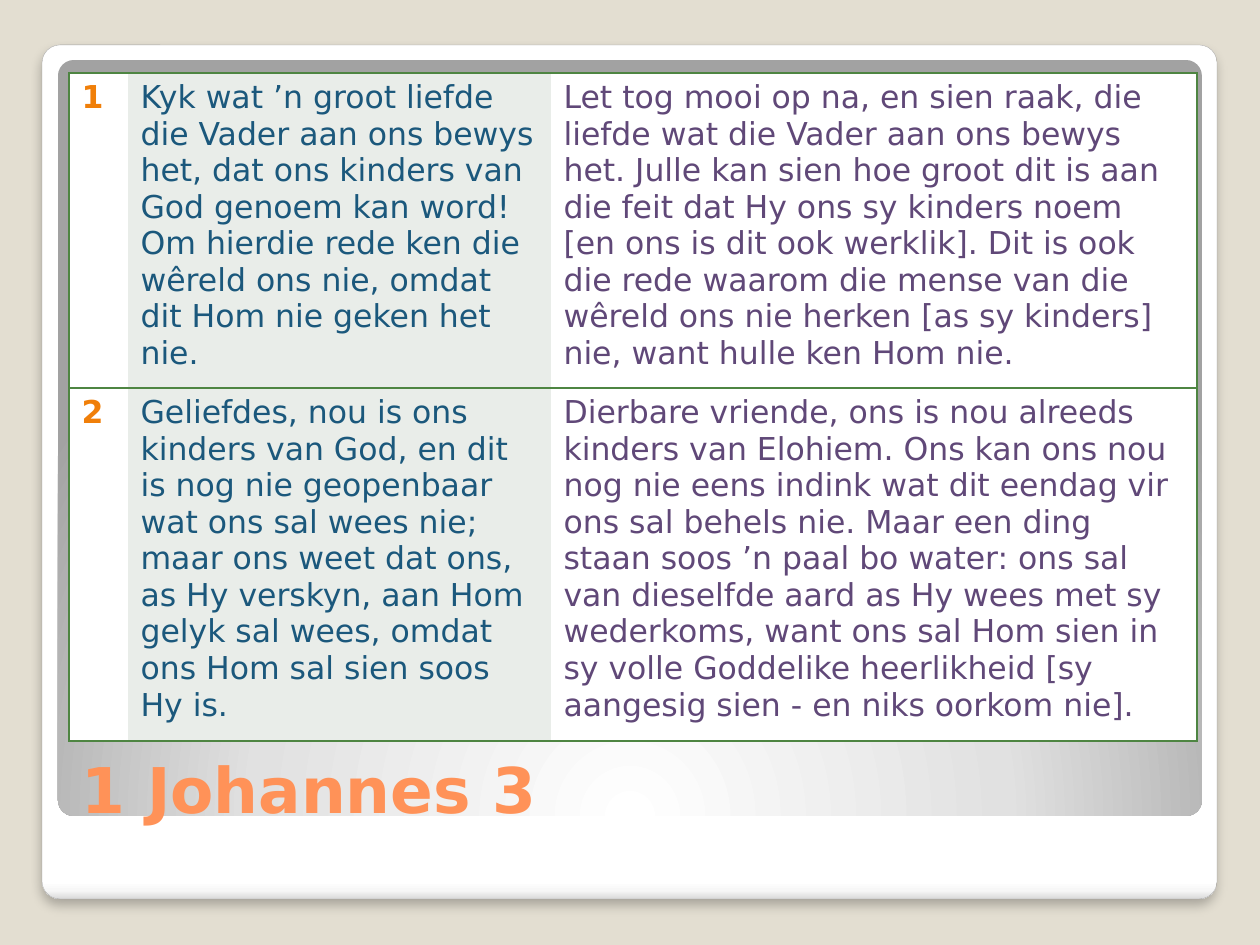
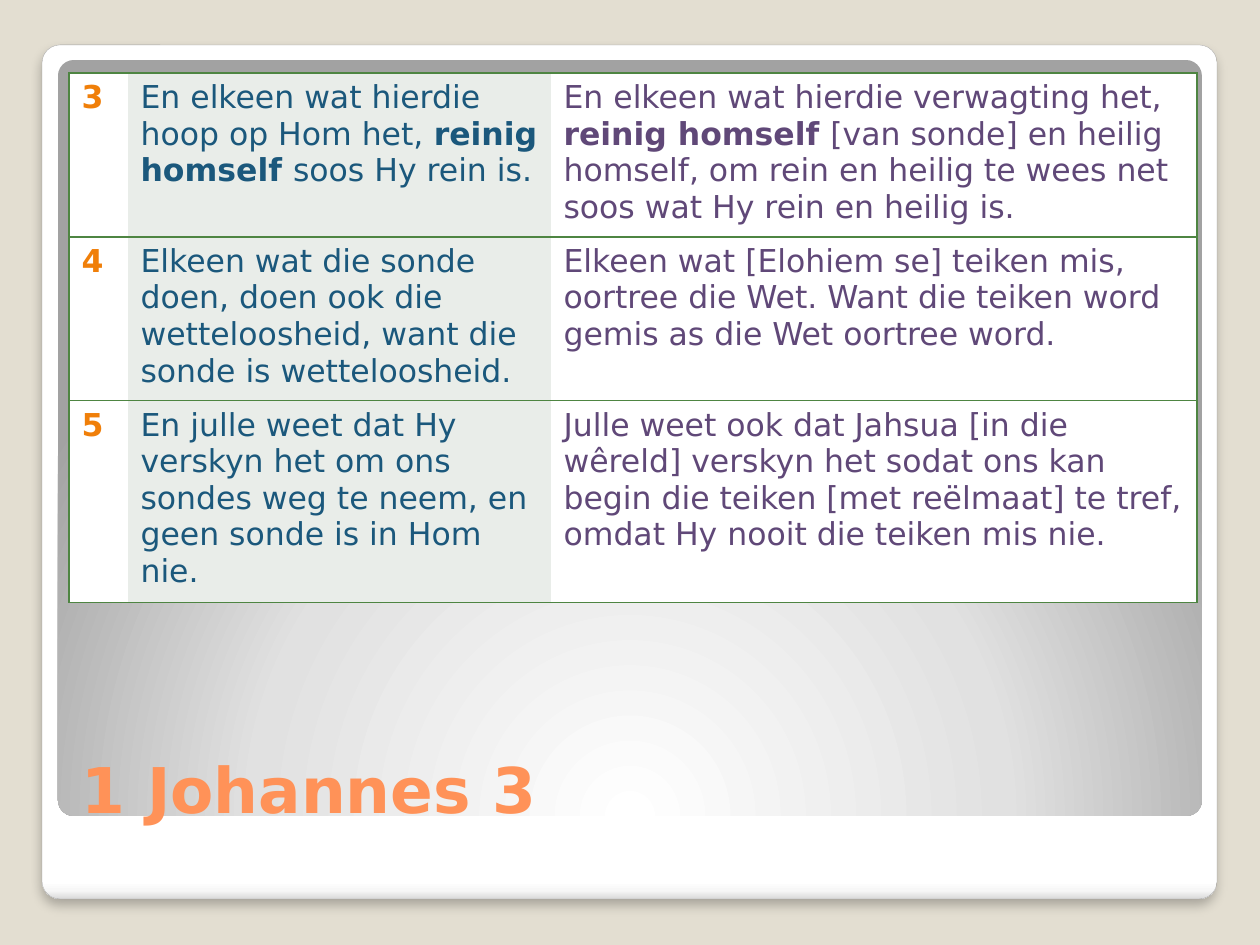
from lxml import etree
from pptx import Presentation
from pptx.dml.color import RGBColor
from pptx.enum import shapes, text
from pptx.oxml import ns
from pptx.util import Emu, Pt

EMU_PER_PX = 914400 / 126
FONT = "DejaVu Sans"
BACKDROP, CARD_EDGE, RULE = "E3DED1", "A4A4A4", "4E8542"
TITLE, NUMBER, VERSE, PARAPHRASE = "FF9258", "F07F09", "1B587C", "604878"
WHITE, TINT = "FFFFFF", "E9EDE9"

CARD_BOX = (42, 45, 1175, 854)
PANEL_BOX = (58, 60, 1144, 756)
TITLE_BOX = (69, 687, 1128, 145)
VERSES_LEFT, VERSES_TOP = 69, 73
COLUMNS = ((59, NUMBER, WHITE), (423, VERSE, TINT), (646, PARAPHRASE, WHITE))
LINE_HEIGHT, CELL_PADDING = 36.6, 12.6

CARD_STOPS = ((0, WHITE), (98, WHITE), (99, "F7F7F7"), (100, "DADADA"))
PANEL_STOPS = ((0, WHITE), (55, "E1E1E1"), (100, "A2A2A2"))

CHAPTER = "1 Johannes 3"
PASSAGES = (
    (
        (8, "*1*",
         "Kyk wat ’n groot liefde die Vader aan ons bewys het, dat ons kinders van God "
         "genoem kan word! Om hierdie rede ken die wêreld ons nie, omdat dit Hom nie "
         "geken het nie.",
         "Let tog mooi op na, en sien raak, die liefde wat die Vader aan ons bewys het. "
         "Julle kan sien hoe groot dit is aan die feit dat Hy ons sy kinders noem [en ons "
         "is dit ook werklik]. Dit is ook die rede waarom die mense van die wêreld ons nie "
         "herken [as sy kinders] nie, want hulle ken Hom nie."),
        (9, "*2*",
         "Geliefdes, nou is ons kinders van God, en dit is nog nie geopenbaar wat ons sal "
         "wees nie; maar ons weet dat ons, as Hy verskyn, aan Hom gelyk sal wees, omdat "
         "ons Hom sal sien soos Hy is.",
         "Dierbare vriende, ons is nou alreeds kinders van Elohiem. Ons kan ons nou nog "
         "nie eens indink wat dit eendag vir ons sal behels nie. Maar een ding staan soos "
         "’n paal bo water: ons sal van dieselfde aard as Hy wees met sy wederkoms, want "
         "ons sal Hom sien in sy volle Goddelike heerlikheid [sy aangesig sien - en niks "
         "oorkom nie]."),
    ),
    (
        (4, "*3*",
         "En elkeen wat hierdie hoop op Hom het, *reinig homself *soos Hy rein is.",
         "En elkeen wat hierdie verwagting het, *reinig homself *[van sonde] en heilig "
         "homself, om rein en heilig te wees net soos wat Hy rein en heilig is."),
        (4, "*4*",
         "Elkeen wat die sonde doen, doen ook die wetteloosheid, want die sonde is "
         "wetteloosheid.",
         "Elkeen wat [Elohiem se] teiken mis, oortree die Wet. Want die teiken word gemis "
         "as die Wet oortree word."),
        (5, "*5*",
         "En julle weet dat Hy verskyn het om ons sondes weg te neem, en geen sonde is in "
         "Hom nie.",
         "Julle weet ook dat Jahsua [in die wêreld] verskyn het sodat ons kan begin die "
         "teiken [met reëlmaat] te tref, omdat Hy nooit die teiken mis nie."),
    ),
)


def px(*lengths):
    return [Emu(round(length * EMU_PER_PX)) for length in lengths]


def rgb(value):
    return RGBColor.from_string(value)


def node(parent, tag, **attributes):
    return etree.SubElement(parent, ns.qn(tag), {k: str(v) for k, v in attributes.items()})


def write(frame, content, *, size, color):
    frame.word_wrap = True
    for index, part in enumerate(content.split("*")):
        if part:
            run = frame.paragraphs[0].add_run()
            run.text = part
            run.font.name = FONT
            run.font.size = Pt(size)
            run.font.bold = index % 2 == 1
            run.font.color.rgb = rgb(color)


def gradient(shape, stops):
    shape.fill.background()
    properties = shape._element.spPr
    grad = etree.Element(ns.qn("a:gradFill"), rotWithShape="1")
    properties.replace(properties.find(ns.qn("a:noFill")), grad)
    stop_list = node(grad, "a:gsLst")
    for position, color in stops:
        node(node(stop_list, "a:gs", pos=position * 1000), "a:srgbClr", val=color)
    return grad


def rounded(slide, box, stops):
    shape = slide.shapes.add_shape(shapes.MSO_SHAPE.ROUNDED_RECTANGLE, *px(*box))
    shape.adjustments[0] = 0.021
    shape.shadow.inherit = False
    return shape, gradient(shape, stops)


def add_card(slide, box):
    card, grad = rounded(slide, box, CARD_STOPS)
    node(grad, "a:lin", ang=90 * 60000, scaled=0)
    card.line.color.rgb = rgb(CARD_EDGE)
    card.line.width = Pt(0.16)
    effects = card._element.spPr.find(ns.qn("a:effectLst"))
    shadow = node(effects, "a:outerShdw", blurRad=Pt(6), dist=Pt(4), dir=90 * 60000,
                  algn="t", rotWithShape=0)
    node(node(shadow, "a:srgbClr", val="000000"), "a:alpha", val=25000)


def add_panel(slide, box):
    panel, grad = rounded(slide, box, PANEL_STOPS)
    panel.line.fill.background()
    focus = node(grad, "a:path", path="circle")
    node(focus, "a:fillToRect", l=50000, t=175000, r=50000, b=-75000)


def add_title(slide, box):
    frame = slide.shapes.add_textbox(*px(*box)).text_frame
    frame.vertical_anchor = text.MSO_ANCHOR.BOTTOM
    write(frame, f"*{CHAPTER}*", size=36, color=TITLE)


def set_borders(cell, ruled_sides):
    properties = cell._tc.get_or_add_tcPr()
    for index, side in enumerate("LRTB"):
        edge = etree.Element(ns.qn(f"a:ln{side}"), w=str(Pt(1)))
        if side in ruled_sides:
            node(node(edge, "a:solidFill"), "a:srgbClr", val=RULE)
        else:
            node(edge, "a:noFill")
        properties.insert(index, edge)


def add_verses(slide, left, top, verses):
    heights = [round(lines * LINE_HEIGHT + CELL_PADDING) for lines, *_ in verses]
    width = sum(column[0] for column in COLUMNS)
    grid = slide.shapes.add_table(len(verses), len(COLUMNS),
                                  *px(left, top, width, sum(heights))).table
    grid.first_row = grid.horz_banding = False
    for column, (column_width, _, _) in zip(grid.columns, COLUMNS):
        column.width = px(column_width)[0]
    for row, height, (_, *contents) in zip(grid.rows, heights, verses):
        row.height = px(height)[0]
        for cell, content, (_, color, fill), side in zip(row.cells, contents, COLUMNS,
                                                         ("L", "", "R")):
            cell.fill.solid()
            cell.fill.fore_color.rgb = rgb(fill)
            set_borders(cell, "TB" + side)
            write(cell.text_frame, content, size=18, color=color)


def add_passage(deck, verses):
    slide = deck.slides.add_slide(deck.slide_layouts[6])
    slide.background.fill.solid()
    slide.background.fill.fore_color.rgb = rgb(BACKDROP)
    add_card(slide, CARD_BOX)
    add_panel(slide, PANEL_BOX)
    add_title(slide, TITLE_BOX)
    add_verses(slide, VERSES_LEFT, VERSES_TOP, verses)


def main():
    deck = Presentation()
    deck.slide_width, deck.slide_height = px(1260, 945)
    for verses in PASSAGES:
        add_passage(deck, verses)
    deck.save("out.pptx")


if __name__ == "__main__":
    main()
